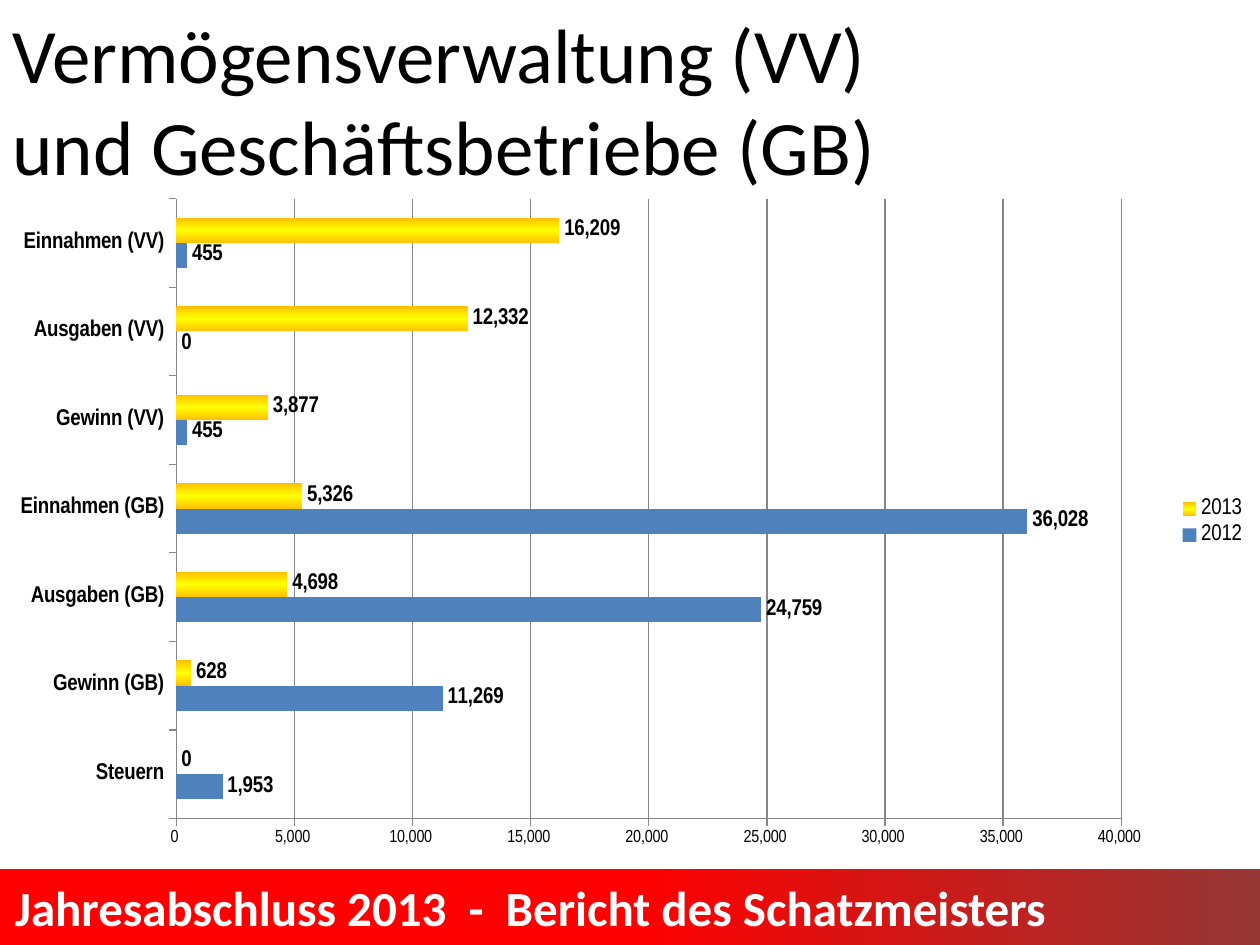
from copy import deepcopy
from dataclasses import dataclass

from pptx import Presentation
from pptx.chart.data import CategoryChartData
from pptx.dml.color import RGBColor
from pptx.enum.chart import (XL_CHART_TYPE, XL_LABEL_POSITION,
                             XL_LEGEND_POSITION, XL_TICK_MARK)
from pptx.enum.shapes import MSO_SHAPE
from pptx.enum.text import MSO_ANCHOR
from pptx.oxml import parse_xml
from pptx.oxml.ns import nsdecls, qn
from pptx.util import Inches, Pt


@dataclass(frozen=True)
class Theme:
    """Colours, fonts and type sizes of the slide."""
    text: str = "000000"
    inverse: str = "FFFFFF"
    grid: str = "868686"
    blue: str = "4F81BD"
    gold: tuple = ("FFC000", "FFFF00", "FFC000")
    band: tuple = ("FF0000", "FF0000", "953735")
    body: str = "Calibri"
    narrow: str = "Arial Narrow"
    title_size: int = 44
    footer_size: int = 28
    label_size: int = 13
    axis_size: int = 10


T = Theme()
W, H = Inches(10), Inches(7.5)
NUM_FMT = r"#,##0_ ;[Red]\-#,##0\ "
CATEGORIES = ("Steuern", "Gewinn (GB)", "Ausgaben (GB)", "Einnahmen (GB)",
              "Gewinn (VV)", "Ausgaben (VV)", "Einnahmen (VV)")
SERIES = {"2012": (1953, 11269, 24759, 36028, 455, 0, 455),
          "2013": (0, 628, 4698, 5326, 3877, 12332, 16209)}


def share(x, y, w, h):
    """Turn shares of the slide into a box in EMU."""
    return int(W * x), int(H * y), int(W * w), int(H * h)


def set_font(font, name, size, color, bold=False):
    """Apply one type style."""
    font.name, font.size, font.bold = name, Pt(size), bold
    font.color.rgb = RGBColor.from_string(color)


def set_gradient(fill, element, colors, angle):
    """Fill with three evenly spaced colour stops."""
    fill.gradient()
    fill.gradient_angle = angle
    stops = next(element.iter(qn("a:gsLst")))
    stops.append(deepcopy(stops[-1]))
    for i, (stop, color) in enumerate(zip(fill.gradient_stops, colors)):
        stop.color.rgb = RGBColor.from_string(color)
        stop.position = i / 2


def add_text(s, box, lines, size, color, bold=False, anchor=MSO_ANCHOR.TOP):
    """Add a text box whose lines are split by line breaks."""
    tf = s.shapes.add_textbox(*box).text_frame
    tf.word_wrap = True
    tf.vertical_anchor = anchor
    p = tf.paragraphs[0]
    for i, line in enumerate(lines):
        if i:
            p.add_line_break()
        r = p.add_run()
        r.text = line
        set_font(r.font, T.body, size, color, bold)


def add_footer(s, box):
    """Add the gradient band with the report name."""
    sp = s.shapes.add_shape(MSO_SHAPE.RECTANGLE, *box)
    sp.shadow.inherit = False
    sp.line.fill.background()
    set_gradient(sp.fill, sp._element, T.band, 0)
    x, y, w, h = box
    add_text(s, (x + int(w * 0.002), y, int(w * 0.98), h),
             ["Jahresabschluss 2013  -  Bericht des Schatzmeisters"],
             T.footer_size, T.inverse, True, MSO_ANCHOR.MIDDLE)


def set_plot_area(chart, x, y, w, h):
    """Fix the inner plot area in shares of the chart."""
    area = chart._chartSpace.chart.plotArea
    for old in area.findall(qn("c:layout")):
        area.remove(old)
    sizes = "".join(f'<c:{k} val="{v}"/>' for k, v in zip("xywh", (x, y, w, h)))
    area.insert(0, parse_xml(
        f'<c:layout {nsdecls("c")}><c:manualLayout><c:layoutTarget val="inner"/>'
        f'<c:xMode val="edge"/><c:yMode val="edge"/>{sizes}'
        '</c:manualLayout></c:layout>'))


def style_axes(chart):
    """Style both axes and the gridlines."""
    cat, val = chart.category_axis, chart.value_axis
    val.minimum_scale, val.maximum_scale, val.major_unit = 0, 40000, 5000
    val.has_major_gridlines = True
    val.tick_labels.number_format = NUM_FMT
    val.tick_labels.number_format_is_linked = False
    for axis, size, bold in ((cat, T.label_size, True), (val, T.axis_size, False)):
        axis.major_tick_mark = XL_TICK_MARK.OUTSIDE
        set_font(axis.tick_labels.font, T.narrow, size, T.text, bold)
    for part in (cat, val, val.major_gridlines):
        part.format.line.width = Pt(0.75)
        part.format.line.color.rgb = RGBColor.from_string(T.grid)


def style_series(plot):
    """Colour the bars and show their values."""
    plot.gap_width, plot.overlap = 150, 0
    plot.vary_by_categories = False
    old, new = plot.series
    old.format.fill.solid()
    old.format.fill.fore_color.rgb = RGBColor.from_string(T.blue)
    set_gradient(new.format.fill, new._element, T.gold, 270)
    for ser in (old, new):
        labels = ser.data_labels
        labels.show_value = True
        labels.position = XL_LABEL_POSITION.OUTSIDE_END
        labels.number_format = NUM_FMT
        labels.number_format_is_linked = False
        set_font(labels.font, T.narrow, T.label_size, T.text, True)


def add_result_chart(s, box):
    """Add the bar chart comparing both years."""
    data = CategoryChartData()
    data.categories = CATEGORIES
    for name, values in SERIES.items():
        data.add_series(name, values)
    chart = s.shapes.add_chart(XL_CHART_TYPE.BAR_CLUSTERED, *box, data).chart
    set_font(chart.font, T.body, T.axis_size, T.text)
    chart.has_title = False
    chart.has_legend = True
    chart.legend.position = XL_LEGEND_POSITION.RIGHT
    chart.legend.include_in_layout = False
    set_font(chart.legend.font, T.narrow, T.label_size, T.text)
    set_plot_area(chart, 0.14, 0.02, 0.75, 0.92)
    style_axes(chart)
    style_series(chart.plots[0])


def main():
    """Build the slide and save it."""
    prs = Presentation()
    prs.slide_width, prs.slide_height = W, H
    s = prs.slides.add_slide(prs.slide_layouts[6])
    add_footer(s, share(0, 0.92, 1, 0.08))
    add_text(s, share(0, 0, 0.79, 0.22),
             ["Vermögensverwaltung (VV)", "und Geschäftsbetriebe (GB)"],
             T.title_size, T.text)
    add_result_chart(s, share(0, 0.196, 1, 0.713))
    prs.save("out.pptx")


if __name__ == "__main__":
    main()
